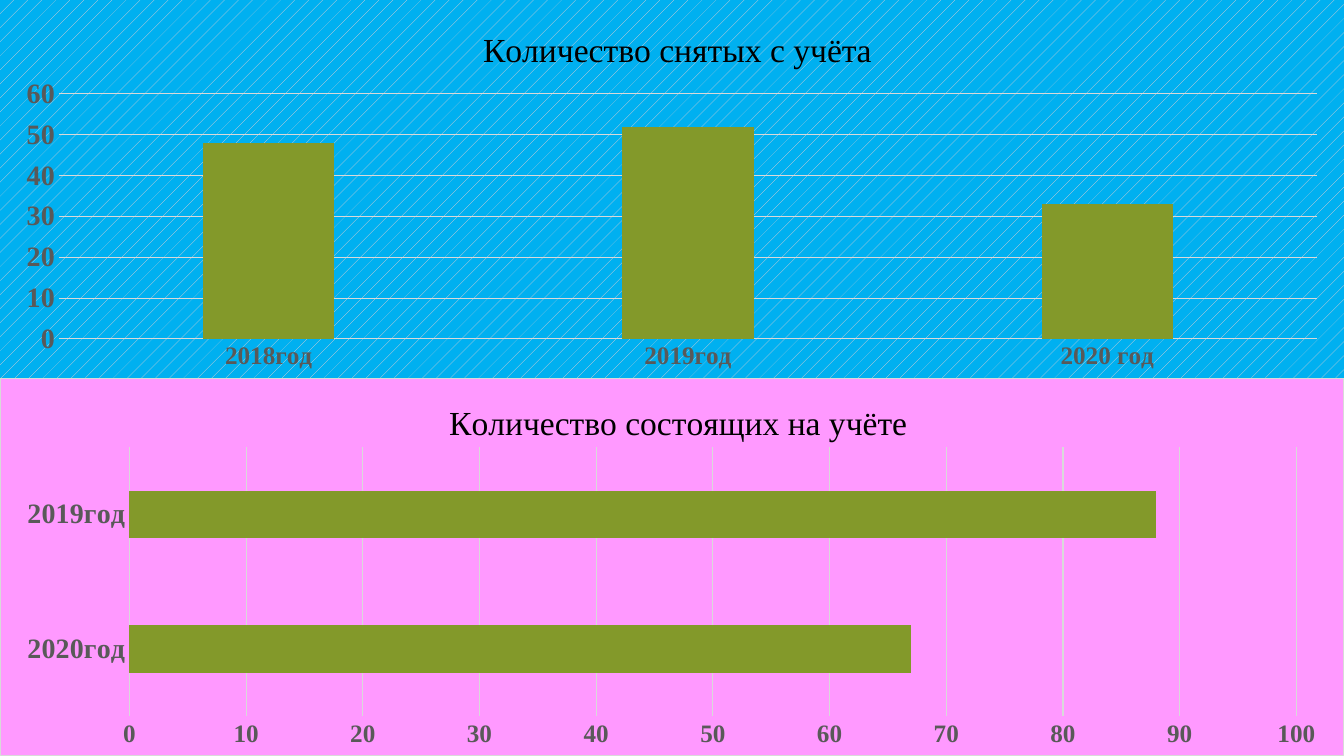
from lxml.etree import SubElement
from pptx import Presentation
from pptx.chart.data import CategoryChartData
from pptx.dml.color import RGBColor
from pptx.enum.chart import XL_CHART_TYPE, XL_TICK_MARK
from pptx.oxml import parse_xml
from pptx.oxml.ns import nsdecls, qn
from pptx.util import Pt

PX = 12192000 / 1344
WIDTH, HALF = 1344, 378
FONT = "Times New Roman"
BLACK = RGBColor(0x00, 0x00, 0x00)
GREY = RGBColor(0x59, 0x59, 0x59)
RULE = RGBColor(0xD9, 0xD9, 0xD9)
OLIVE = RGBColor(0x83, 0x99, 0x2A)
SKY = RGBColor(0x00, 0xB0, 0xF0)
BLUSH = RGBColor(0xF1, 0xD4, 0xD2)
PINK = RGBColor(0xFF, 0x99, 0xFF)

DOTTED_SKY = (
    f'<a:pattFill prst="pct5"><a:fgClr><a:srgbClr val="{BLUSH}"/></a:fgClr>'
    f'<a:bgClr><a:srgbClr val="{SKY}"/></a:bgClr></a:pattFill><a:ln><a:noFill/></a:ln>'
)
BORDERED_PINK = (
    f'<a:solidFill><a:srgbClr val="{PINK}"/></a:solidFill>'
    f'<a:ln w="9525"><a:solidFill><a:srgbClr val="{RULE}"/></a:solidFill></a:ln>'
)


def px(length):
    """Turn pixels into EMU."""
    return round(length * PX)


def set_font(font, size, color, bold=False):
    """Apply the slide's typeface with a size, colour and weight."""
    for name, value in {"name": FONT, "size": Pt(size), "bold": bold}.items():
        setattr(font, name, value)
    font.color.rgb = color


def set_line(line):
    """Draw a thin pale rule."""
    line.color.rgb = RULE
    line.width = Pt(0.75)


def make_layout(values):
    """Build a manual chart layout from pixel values keyed by element name."""
    layout = parse_xml(f"<c:layout {nsdecls('c')}><c:manualLayout/></c:layout>")
    for name, value in values.items():
        if name in ("x", "w"):
            value = round(value / WIDTH, 4)
        elif name in ("y", "h"):
            value = round(value / HALF, 4)
        SubElement(layout[0], qn(f"c:{name}")).set("val", str(value))
    return layout


def drop_layout(parent):
    """Remove an automatic layout from a chart part."""
    for layout in parent.findall(qn("c:layout")):
        parent.remove(layout)


def add_title(chart, title, left, top):
    """Write the chart title at a fixed place."""
    frame = chart.chart_title.text_frame
    frame.text = title
    set_font(frame.paragraphs[0].runs[0].font, 24, BLACK)
    chart.chart_title.include_in_layout = False
    element = next(chart.element.iter(qn("c:title")))
    drop_layout(element)
    element.find(qn("c:tx")).addnext(
        make_layout({"xMode": "edge", "yMode": "edge", "x": left, "y": top})
    )


def place_plot(chart, left, top, width, height):
    """Fix the inner plot area within the chart."""
    plot_area = next(chart.element.iter(qn("c:plotArea")))
    drop_layout(plot_area)
    plot_area.insert(0, make_layout({
        "layoutTarget": "inner", "xMode": "edge", "yMode": "edge",
        "x": left, "y": top, "w": width, "h": height,
    }))


def format_axes(chart, category_size, value_size, maximum):
    """Style both axes and the value gridlines."""
    categories, values = chart.category_axis, chart.value_axis
    for axis, size in ((categories, category_size), (values, value_size)):
        axis.major_tick_mark = axis.minor_tick_mark = XL_TICK_MARK.NONE
        set_font(axis.tick_labels.font, size, GREY, bold=True)
    set_line(categories.format.line)
    values.format.line.fill.background()
    set_line(values.major_gridlines.format.line)
    scale = {"minimum_scale": 0, "maximum_scale": maximum, "major_unit": 10}
    for name, value in scale.items():
        setattr(values, name, value)


def add_bars(slide, top, kind, counts, gap, overlap, background):
    """Add a half-slide bar chart of yearly counts."""
    data = CategoryChartData()
    data.categories = list(counts)
    data.add_series("Series 1", list(counts.values()))
    chart = slide.shapes.add_chart(kind, 0, px(top), px(WIDTH), px(HALF), data).chart
    chart.has_legend = False
    set_font(chart.font, 10, BLACK)
    bars = chart.plots[0]
    for name, value in {"gap_width": gap, "overlap": overlap, "vary_by_categories": False}.items():
        setattr(bars, name, value)
    fill = bars.series[0].format.fill
    fill.solid()
    fill.fore_color.rgb = OLIVE
    chart.element.find(qn("c:chart")).addnext(
        parse_xml(f"<c:spPr {nsdecls('c', 'a')}>{background}</c:spPr>")
    )
    return chart


def main():
    """Build the slide with the two register charts."""
    deck = Presentation()
    deck.slide_width, deck.slide_height = px(WIDTH), px(2 * HALF)
    slide = deck.slides.add_slide(deck.slide_layouts[6])

    removed = add_bars(slide, 0, XL_CHART_TYPE.COLUMN_CLUSTERED,
                       {"2018год": 48, "2019год": 52, "2020 год": 33},
                       219, -27, DOTTED_SKY)
    add_title(removed, "Количество снятых с учёта", 477, 22)
    place_plot(removed, 59, 94, 1258, 245)
    format_axes(removed, 18, 20, 60)

    registered = add_bars(slide, HALF, XL_CHART_TYPE.BAR_CLUSTERED,
                          {"2020год": 67, "2019год": 88},
                          182, 0, BORDERED_PINK)
    add_title(registered, "Количество состоящих на учёте", 443, 17)
    place_plot(registered, 129, 69, 1168, 270)
    format_axes(registered, 20, 18, 100)

    deck.save("out.pptx")


if __name__ == "__main__":
    main()
